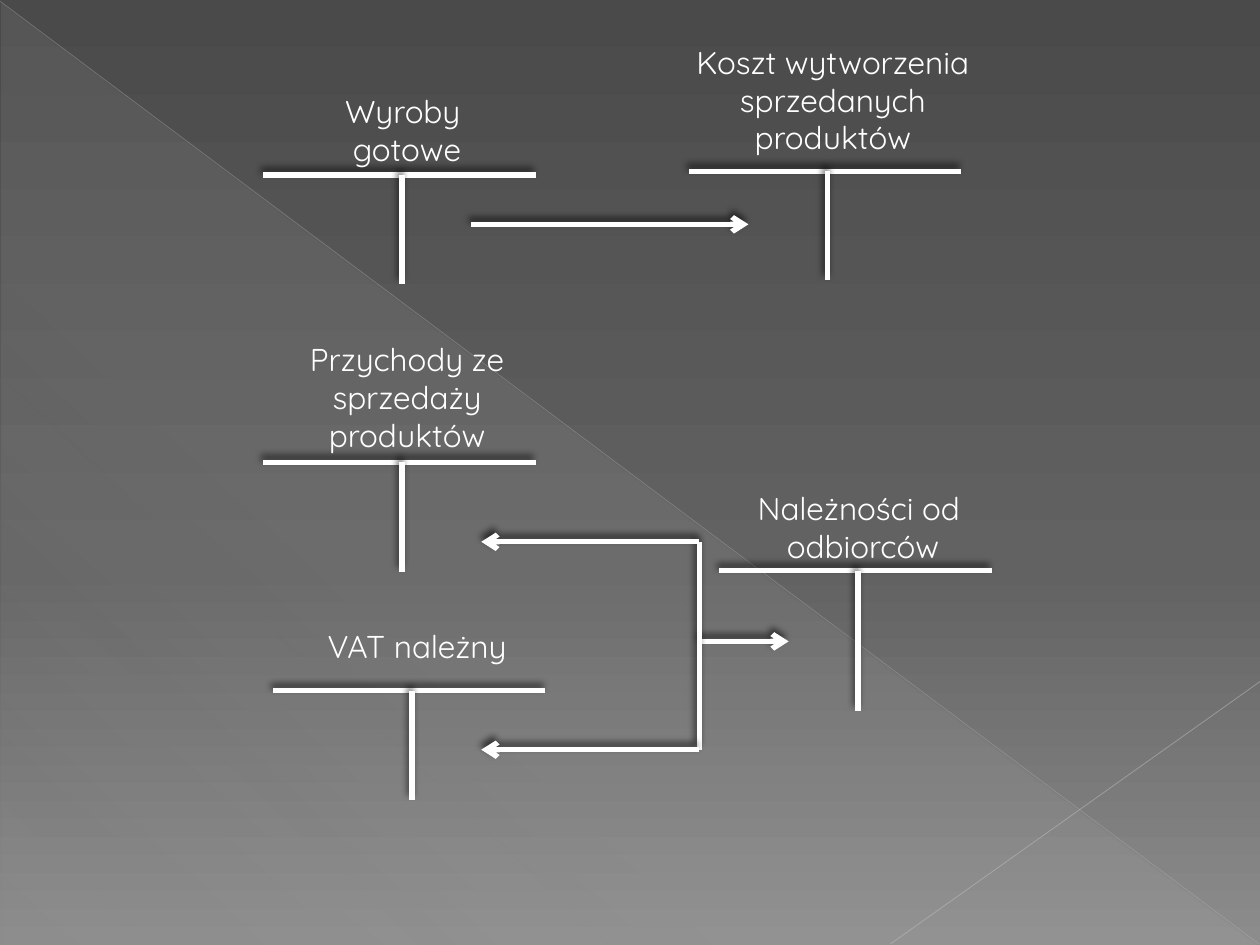
"""Build a slide of T-accounts showing how a sale of finished goods is posted."""
from lxml.etree import SubElement
from pptx import Presentation
from pptx.dml.color import RGBColor
from pptx.enum.shapes import MSO_CONNECTOR, MSO_SHAPE
from pptx.enum.text import MSO_AUTO_SIZE, PP_ALIGN
from pptx.oxml.ns import qn
from pptx.util import Pt

ACCOUNTS = [
    dict(lines=["Wyroby ", "gotowe"], left=150.5, bar=100, stem=62, top=49, height=51),
    dict(lines=["Koszt wytworzenia sprzedanych produktów"],
         left=393.8, bar=97.9, stem=62, top=20.9, height=72.7),
    dict(lines=["Przychody ze sprzedaży produktów"],
         left=150.5, bar=264.2, stem=62.6, top=190.8, height=72.7),
    dict(lines=["VAT należny"], left=156.2, bar=394.6, stem=62.6, top=355, height=28.8),
    dict(lines=["Należności od ", "odbiorców"],
         left=411.1, bar=326.2, stem=80, top=275.8, height=64.8),
]
BAR_WIDTH, STEM_OFFSET = 155.5, 79.2
LABEL_OFFSET, LABEL_WIDTH = -11.5, 187.2

COST_ARROW = (269.3, 128.2, 427.7, 128.2)
BRANCH = dict(x=399.6, top=309.6, middle=366.5, bottom=428.4, left=275, right=450.7)

THEME = dict(
    font="Quicksand", size=18, ink="FFFFFF", weight=3,
    background=[(0, "4A4A4A", 100), (60, "626262", 100), (100, "8C8C8C", 100)],
    triangle=[(0, "D2D2D2", 10), (70, "D2D2D2", 8), (100, "D2D2D2", 1)],
    shadow=dict(color="000000", alpha=60, blur=4, distance=3, angle=245),
)
DECOR_LINES = [
    ((0, 0.7, 719.3, 539.3), dict(color="BFBFBF", weight=0.39, alpha=35)),
    ((720, 389.5, 509, 539.3), dict(color="C6C6C6", weight=0.47, alpha=45)),
]


def add_color(parent, color, alpha):
    element = SubElement(parent, qn("a:srgbClr"), val=color)
    if alpha < 100:
        SubElement(element, qn("a:alpha"), val=str(alpha * 1000))


def set_gradient(fill, owner, stops, angle):
    fill.gradient()
    gradient = owner.find(".//" + qn("a:gradFill"))
    stop_list = gradient.find(qn("a:gsLst"))
    for stop in list(stop_list):
        stop_list.remove(stop)
    for position, color, alpha in stops:
        add_color(SubElement(stop_list, qn("a:gs"), pos=str(position * 1000)), color, alpha)
    gradient.find(qn("a:lin")).set("ang", str(angle * 60000))


def add_line(shapes, points, color=THEME["ink"], weight=THEME["weight"],
             alpha=100, arrow=False, shadow=THEME["shadow"]):
    connector = shapes.add_connector(MSO_CONNECTOR.STRAIGHT, *map(Pt, points))
    connector.line.width = Pt(weight)
    connector.line.color.rgb = RGBColor.from_string(color)
    properties = connector._element.spPr
    line = properties.find(qn("a:ln"))
    if alpha < 100:
        SubElement(line.find(".//" + qn("a:srgbClr")), qn("a:alpha"), val=str(alpha * 1000))
    if arrow:
        SubElement(line, qn("a:tailEnd"), type="arrow")
    effects = SubElement(properties, qn("a:effectLst"))
    if shadow:
        outer = SubElement(effects, qn("a:outerShdw"), blurRad=str(Pt(shadow["blur"])),
                           dist=str(Pt(shadow["distance"])),
                           dir=str(shadow["angle"] * 60000), rotWithShape="0")
        add_color(outer, shadow["color"], shadow["alpha"])
    return connector


def add_text(shapes, lines, left, top, width, height, align=PP_ALIGN.CENTER,
             font=THEME["font"], size=THEME["size"], color=THEME["ink"]):
    box = shapes.add_textbox(*map(Pt, (left, top, width, height)))
    frame = box.text_frame
    frame.word_wrap = True
    frame.auto_size = MSO_AUTO_SIZE.SHAPE_TO_FIT_TEXT
    frame.text = "\n".join(lines)
    for paragraph in frame.paragraphs:
        paragraph.alignment = align
        run_font = paragraph.runs[0].font
        run_font.name, run_font.size = font, Pt(size)
        run_font.color.rgb = RGBColor.from_string(color)


def add_backdrop(slide):
    set_gradient(slide.background.fill, slide.element, THEME["background"], 90)
    triangle = slide.shapes.add_shape(
        MSO_SHAPE.RIGHT_TRIANGLE, *map(Pt, (0.7, 1.4, 718.6, 538.6)))
    triangle.shadow.inherit = False
    triangle.line.fill.background()
    set_gradient(triangle.fill, triangle._element, THEME["triangle"], 133)
    for points, style in DECOR_LINES:
        add_line(slide.shapes, points, shadow=None, **style)


def add_account(slide, lines, left, bar, stem, top, height):
    shapes = slide.shapes.add_group_shape().shapes
    middle = left + STEM_OFFSET
    add_line(shapes, (left, bar, left + BAR_WIDTH, bar))
    add_line(shapes, (middle, bar, middle, bar + stem))
    add_text(shapes, lines, left + LABEL_OFFSET, top, LABEL_WIDTH, height)


def add_branch(slide, x, top, middle, bottom, left, right):
    shapes = slide.shapes.add_group_shape().shapes
    add_line(shapes, (x, middle, right, middle), arrow=True)
    add_line(shapes, (x, top, x, bottom))
    for y in (top, bottom):
        add_line(shapes, (x, y, left, y), arrow=True)


def main():
    presentation = Presentation()
    presentation.slide_width, presentation.slide_height = Pt(720), Pt(540)
    slide = presentation.slides.add_slide(presentation.slide_layouts[6])
    add_backdrop(slide)
    for account in ACCOUNTS:
        add_account(slide, **account)
    add_line(slide.shapes, COST_ARROW, arrow=True)
    add_branch(slide, **BRANCH)
    presentation.save("out.pptx")


if __name__ == "__main__":
    main()
